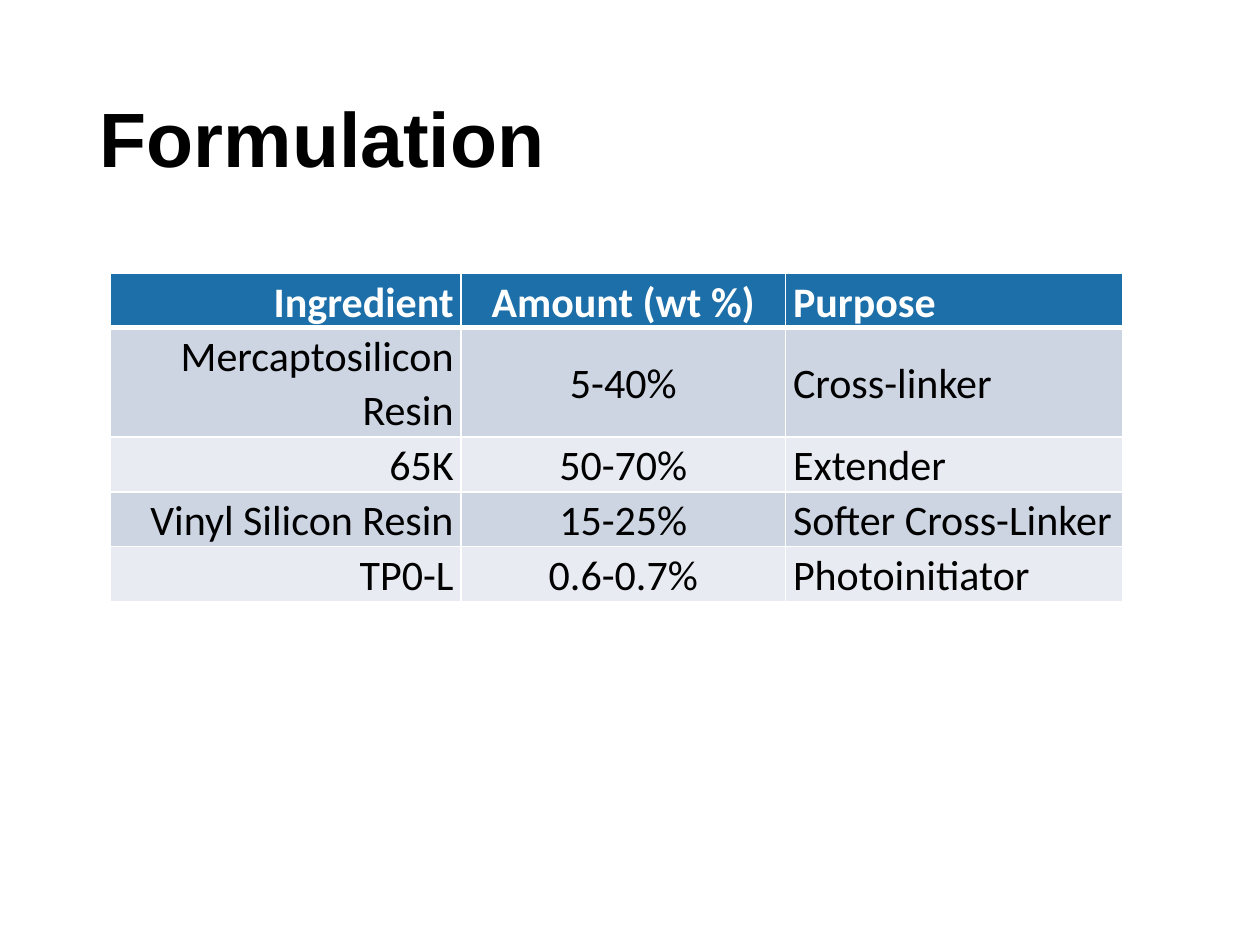
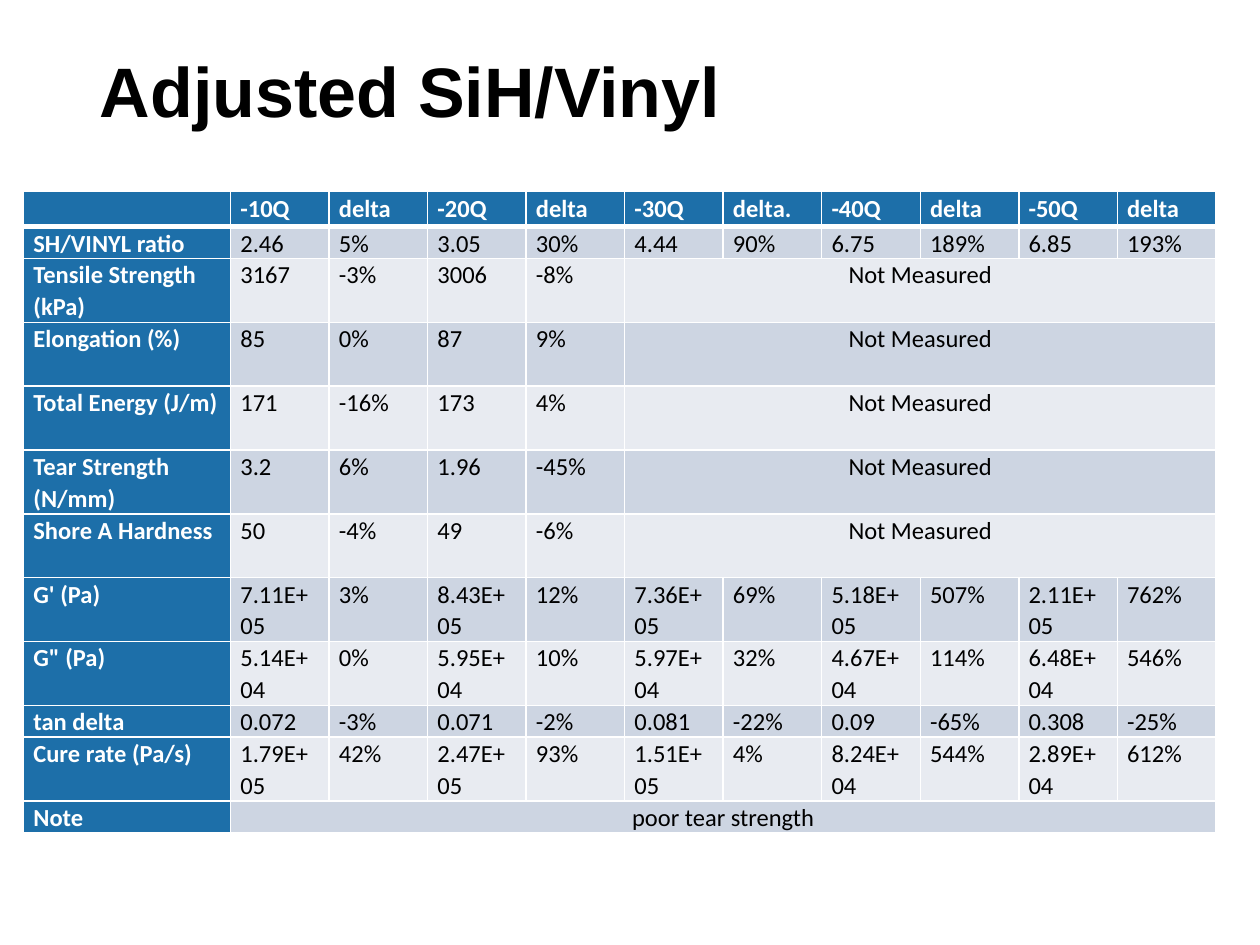
from lxml import etree
from pptx import Presentation
from pptx.dml.color import RGBColor
from pptx.enum.text import MSO_ANCHOR as Anchor, PP_ALIGN as Align
from pptx.oxml.ns import qn
from pptx.util import Pt

WHITE = RGBColor(0xFF, 0xFF, 0xFF)
BLACK = RGBColor(0x00, 0x00, 0x00)
HEADER_BLUE = RGBColor(0x1D, 0x6F, 0xA9)
BAND_COLORS = (RGBColor(0xCD, 0xD5, 0xE2), RGBColor(0xE8, 0xEB, 0xF1))

FORMULATION = [
    ("Ingredient", "Amount (wt %)", "Purpose"),
    ("Mercaptosilicon Resin", "5-40%", "Cross-linker"),
    ("65K", "50-70%", "Extender"),
    ("Vinyl Silicon Resin", "15-25%", "Softer Cross-Linker"),
    ("TP0-L", "0.6-0.7%", "Photoinitiator"),
]

NOT_MEASURED = "Not Measured"
PROPERTIES = [
    ("", "-10Q", "delta", "-20Q", "delta", "-30Q", "delta.",
     "-40Q", "delta", "-50Q", "delta"),
    ("SH/VINYL ratio", "2.46", "5%", "3.05", "30%", "4.44", "90%",
     "6.75", "189%", "6.85", "193%"),
    ("Tensile Strength (kPa)", "3167", "-3%", "3006", "-8%", NOT_MEASURED),
    ("Elongation (%)", "85", "0%", "87", "9%", NOT_MEASURED),
    ("Total Energy (J/m)", "171", "-16%", "173", "4%", NOT_MEASURED),
    ("Tear Strength (N/mm)", "3.2", "6%", "1.96", "-45%", NOT_MEASURED),
    ("Shore A Hardness", "50", "-4%", "49", "-6%", NOT_MEASURED),
    ("G' (Pa)", "7.11E+05", "3%", "8.43E+05", "12%", "7.36E+05", "69%",
     "5.18E+05", "507%", "2.11E+05", "762%"),
    ('G" (Pa)', "5.14E+04", "0%", "5.95E+04", "10%", "5.97E+04", "32%",
     "4.67E+04", "114%", "6.48E+04", "546%"),
    ("tan delta", "0.072", "-3%", "0.071", "-2%", "0.081", "-22%",
     "0.09", "-65%", "0.308", "-25%"),
    ("Cure rate (Pa/s)", "1.79E+05", "42%", "2.47E+05", "93%", "1.51E+05", "4%",
     "8.24E+04", "544%", "2.89E+04", "612%"),
    ("Note", "poor tear strength"),
]


def write_text(paragraph, text, size, font="Calibri", color=BLACK, bold=False,
               align=Align.LEFT, line_spacing=1.07):
    paragraph.alignment = align
    paragraph.line_spacing = line_spacing
    if not text:
        # An empty cell takes its line height from the paragraph end mark.
        etree.SubElement(paragraph._p, qn("a:endParaRPr"), sz=str(size * 100))
        return
    run = paragraph.add_run()
    run.text = text
    run.font.size = Pt(size)
    run.font.name = font
    run.font.bold = bold
    run.font.color.rgb = color


def set_borders(cell, **widths):
    """Draw white borders; widths in points are keyed by side: L, R, T, B."""
    properties = cell._tc.get_or_add_tcPr()
    for side, width in widths.items():
        line = etree.SubElement(properties, qn(f"a:ln{side}"), w=str(Pt(width)))
        fill = etree.SubElement(line, qn("a:solidFill"))
        etree.SubElement(fill, qn("a:srgbClr"), val=str(WHITE))


class Deck:
    def __init__(self):
        self.presentation = Presentation()
        self.presentation.slide_width = Pt(720)
        self.presentation.slide_height = Pt(540)
        self.slide = None

    def add_slide(self):
        self.slide = self.presentation.slides.add_slide(
            self.presentation.slide_layouts[6])

    def add_title(self, text, size, anchor):
        box = self.slide.shapes.add_textbox(Pt(50), Pt(29), Pt(621), Pt(104.4))
        frame = box.text_frame
        frame.word_wrap = True
        frame.vertical_anchor = anchor
        write_text(frame.paragraphs[0], text, size, font="Arial", bold=True,
                   line_spacing=0.9)

    def add_table(self, rows, left, top, widths, heights, size, inset, aligns,
                  anchors=(Anchor.TOP, Anchor.TOP), header_column=False):
        """Fill a banded table; the last value of a short row spans to the right edge.

        anchors holds the header row's anchor, then that of the body rows.
        """
        table = self.slide.shapes.add_table(
            len(rows), len(widths), Pt(left), Pt(top),
            Pt(sum(widths)), Pt(sum(heights))).table
        for column, width in zip(table.columns, widths):
            column.width = Pt(width)
        for row, height in zip(table.rows, heights):
            row.height = Pt(height)

        last_column = len(widths) - 1
        for row_index, values in enumerate(rows):
            for column_index in range(len(widths)):
                cell = table.cell(row_index, column_index)
                is_header = row_index == 0 or (header_column and column_index == 0)
                set_borders(cell, L=1, R=1, T=3 if row_index == 1 else 1,
                            B=3 if row_index == 0 else 1)
                cell.fill.solid()
                cell.fill.fore_color.rgb = (
                    HEADER_BLUE if is_header else BAND_COLORS[(row_index - 1) % 2])
                cell.margin_left = cell.margin_right = Pt(inset)
                cell.margin_top = cell.margin_bottom = 0
                cell.vertical_anchor = anchors[min(row_index, 1)]
                if column_index >= len(values):
                    continue
                spans = column_index == len(values) - 1 < last_column
                write_text(cell.text_frame.paragraphs[0], values[column_index], size,
                           color=WHITE if is_header else BLACK, bold=is_header,
                           align=Align.CENTER if spans else aligns[column_index])
            if len(values) <= last_column:
                table.cell(row_index, len(values) - 1).merge(
                    table.cell(row_index, last_column))


def add_formulation_slide(deck):
    deck.add_slide()
    deck.add_title("Formulation", 44, Anchor.MIDDLE)
    row_height = 31.3
    deck.add_table(FORMULATION, 62.9, 156.4, widths=[200.6, 185.4, 193],
                   heights=[30.8, 2 * row_height] + [row_height] * 3,
                   size=24, inset=4.3,
                   aligns=[Align.RIGHT, Align.CENTER, Align.LEFT],
                   anchors=(Anchor.BOTTOM, Anchor.MIDDLE))


def add_adjusted_ratio_slide(deck):
    deck.add_slide()
    one_line, two_lines = 18.2, 36.5
    one_line_rows = ("SH/VINYL ratio", "tan delta", "Note")
    heights = [20] + [one_line if row[0] in one_line_rows else two_lines
                      for row in PROPERTIES[1:]]
    deck.add_table(PROPERTIES, 13.5, 109.5, widths=[118.3] + [56.3] * 10,
                   heights=heights, size=14, inset=5.6, aligns=[Align.LEFT] * 11,
                   header_column=True)
    deck.add_title("Adjusted SiH/Vinyl", 40, Anchor.TOP)


def main():
    deck = Deck()
    add_formulation_slide(deck)
    add_adjusted_ratio_slide(deck)
    deck.presentation.save("out.pptx")


if __name__ == "__main__":
    main()
